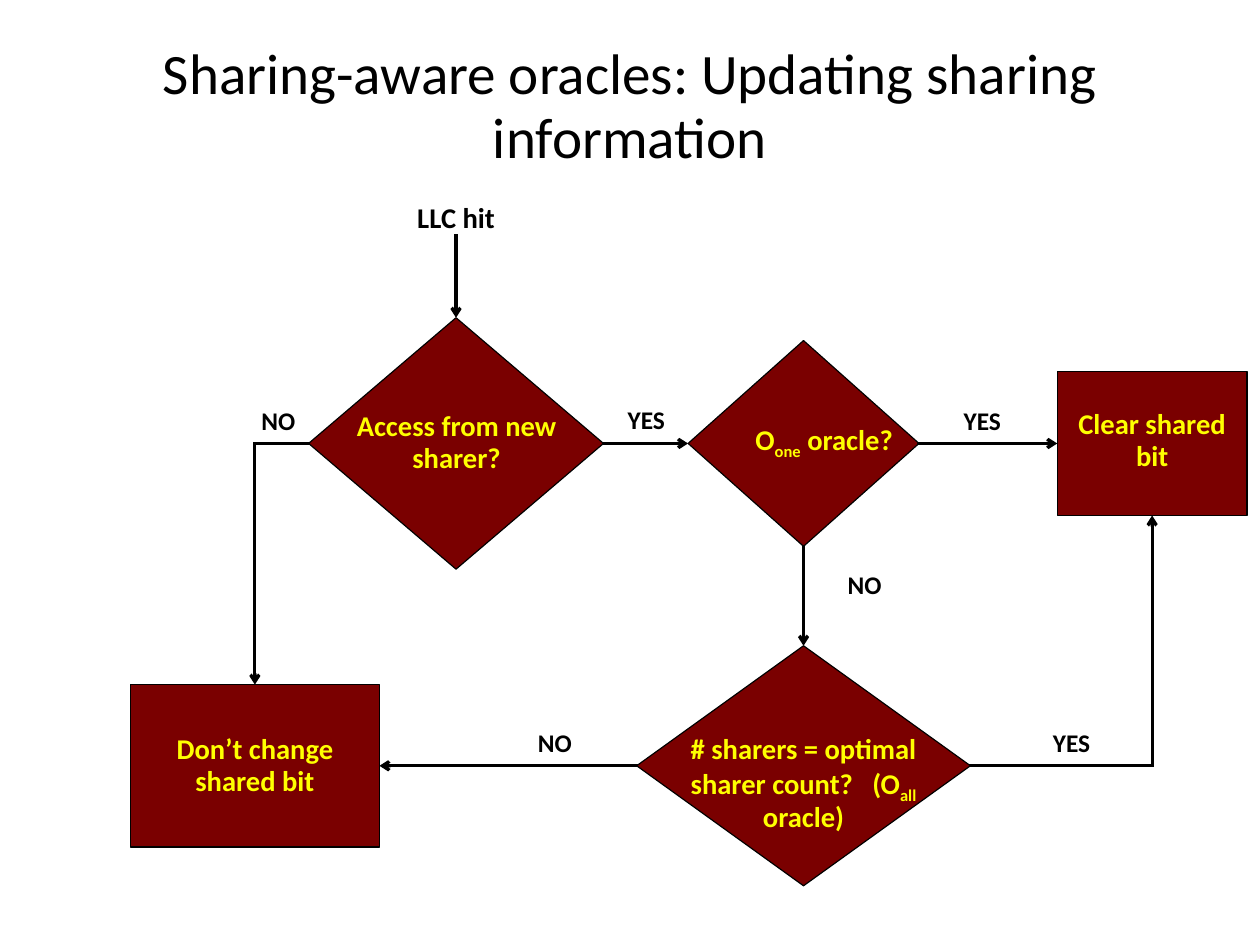
from lxml import etree
from pptx import Presentation
from pptx.dml.color import RGBColor
from pptx.enum import shapes, text
from pptx.oxml.ns import qn
from pptx.util import Cm, Inches, Pt

BLACK = RGBColor(0x00, 0x00, 0x00)
MAROON = RGBColor(0x7A, 0x00, 0x00)
YELLOW = RGBColor(0xFF, 0xFF, 0x00)
FONT = "Calibri"
DECISION = shapes.MSO_SHAPE.FLOWCHART_DECISION
PROCESS = shapes.MSO_SHAPE.FLOWCHART_PROCESS
TOP, LEFT, BOTTOM, RIGHT = range(4)

# Run formats: subscript, and a widened space (hundredths of a point)
PLAIN, SUBSCRIPT, WIDE = {}, {"baseline": "-25000"}, {"spc": "800"}

# Content: lengths in inches, boxes as (left, top, width, height)
TITLE = "Sharing-aware oracles: Updating sharing information"
TITLE_BOX = (0.55, 0.33, 9.92, 1.22)

# name: (preset, box, caption box, caption runs as (words, format))
NODES = {
    "new": (DECISION, (2.7, 2.78, 2.58, 2.2), (2.66, 3.55, 2.67, 0.66),
            [("Access from new sharer?", PLAIN)]),
    "one": (DECISION, (6.02, 2.98, 2.02, 1.8), (6.12, 3.64, 2.18, 0.38),
            [("O", PLAIN), ("one", SUBSCRIPT), (" oracle?", PLAIN)]),
    "clear": (PROCESS, (9.25, 3.25, 1.66, 1.26), (9.29, 3.53, 1.58, 0.66),
              [("Clear shared bit", PLAIN)]),
    "all": (DECISION, (5.57, 5.65, 2.92, 2.1), (5.94, 6.37, 2.18, 0.95),
            [("# sharers = optimal sharer count?", PLAIN), (" ", WIDE),
             ("(O", PLAIN), ("all", SUBSCRIPT), (" oracle)", PLAIN)]),
    "keep": (PROCESS, (1.14, 5.99, 2.18, 1.42), (1.14, 6.37, 2.18, 0.66),
             [("Don’t change shared bit", PLAIN)]),
}

START = ("LLC hit", (3.45, 1.73, 1.08, 0.38))
LABEL_SIZE = (0.97, 0.35)
LABELS = [("YES", 5.17, 3.51), ("NO", 1.95, 3.52), ("YES", 8.11, 3.52),
          ("NO", 7.08, 4.95), ("YES", 8.89, 6.34), ("NO", 4.37, 6.34)]

# Each end is a (node, side) pair or an (x, y) point; last item: arrowhead
NO_CORNER, YES_CORNER = (2.23, 3.88), (10.08, 6.7)
LINKS = [
    ((3.99, 2.06), ("new", TOP), True),
    (("new", RIGHT), ("one", LEFT), True),
    (("one", RIGHT), ("clear", LEFT), True),
    (("one", BOTTOM), ("all", TOP), True),
    (("all", LEFT), ("keep", RIGHT), True),
    (("new", LEFT), NO_CORNER, False),
    (NO_CORNER, ("keep", TOP), True),
    (("all", RIGHT), YES_CORNER, False),
    (YES_CORNER, ("clear", BOTTOM), True),
]


def inches(box):
    return [Inches(v) for v in box]


def write(tf, runs, size, color, bold=True):
    tf.word_wrap = True
    p = tf.paragraphs[0]
    p.alignment = text.PP_ALIGN.CENTER
    p.line_spacing = 0.93
    for words, run_format in runs:
        r = p.add_run()
        r.text = words
        r.font.name, r.font.size, r.font.bold = FONT, Pt(size), bold
        r.font.color.rgb = color
        for key, value in run_format.items():
            r.font._element.set(key, value)


def add_text(s, box, runs, size, color):
    write(s.shapes.add_textbox(*inches(box)).text_frame, runs, size, color)


def add_node(s, preset, box):
    sp = s.shapes.add_shape(preset, *inches(box))
    sp.shadow.inherit = False
    sp.fill.solid()
    sp.fill.fore_color.rgb = MAROON
    sp.line.color.rgb = BLACK
    sp.line.width = Pt(0.75)
    return sp


def end_point(end):
    """Middle of a node's side, or the point itself."""
    if end[0] not in NODES:
        return end
    x, y, w, h = NODES[end[0]][1]
    return [(x + w / 2, y), (x, y + h / 2),
            (x + w / 2, y + h), (x + w, y + h / 2)][end[1]]


def add_link(s, nodes, start, end, arrow):
    c = s.shapes.add_connector(shapes.MSO_CONNECTOR.STRAIGHT,
                               *inches((*end_point(start), *end_point(end))))
    for place, join in ((start, c.begin_connect), (end, c.end_connect)):
        if place[0] in nodes:
            join(nodes[place[0]], place[1])
    c.line.color.rgb = BLACK
    c.line.width = Pt(2)
    ln = c.line._get_or_add_ln()
    ln.set("cap", "sq")
    if arrow:
        etree.SubElement(ln, qn("a:tailEnd"), type="arrow")
    etree.SubElement(c._element.spPr, qn("a:effectLst"))


def main():
    prs = Presentation()
    prs.slide_width, prs.slide_height = Cm(28), Cm(21)
    s = prs.slides.add_slide(prs.slide_layouts[5])

    # Title
    title = s.shapes.title
    title.left, title.top, title.width, title.height = inches(TITLE_BOX)
    tf = title.text_frame
    tf.margin_left = tf.margin_right = tf.margin_top = tf.margin_bottom = 0
    tf.vertical_anchor = text.MSO_ANCHOR.MIDDLE
    write(tf, [(TITLE, PLAIN)], 36, BLACK, bold=False)

    # Flowchart nodes with their captions
    nodes = {}
    for name, (preset, box, caption_box, runs) in NODES.items():
        nodes[name] = add_node(s, preset, box)
        add_text(s, caption_box, runs, 18, YELLOW)

    # Links
    for start, end, arrow in LINKS:
        add_link(s, nodes, start, end, arrow)

    # Start text and branch labels
    add_text(s, START[1], [(START[0], PLAIN)], 18, BLACK)
    for words, x, y in LABELS:
        add_text(s, (x, y, *LABEL_SIZE), [(words, PLAIN)], 16, BLACK)

    prs.save("out.pptx")


if __name__ == "__main__":
    main()
